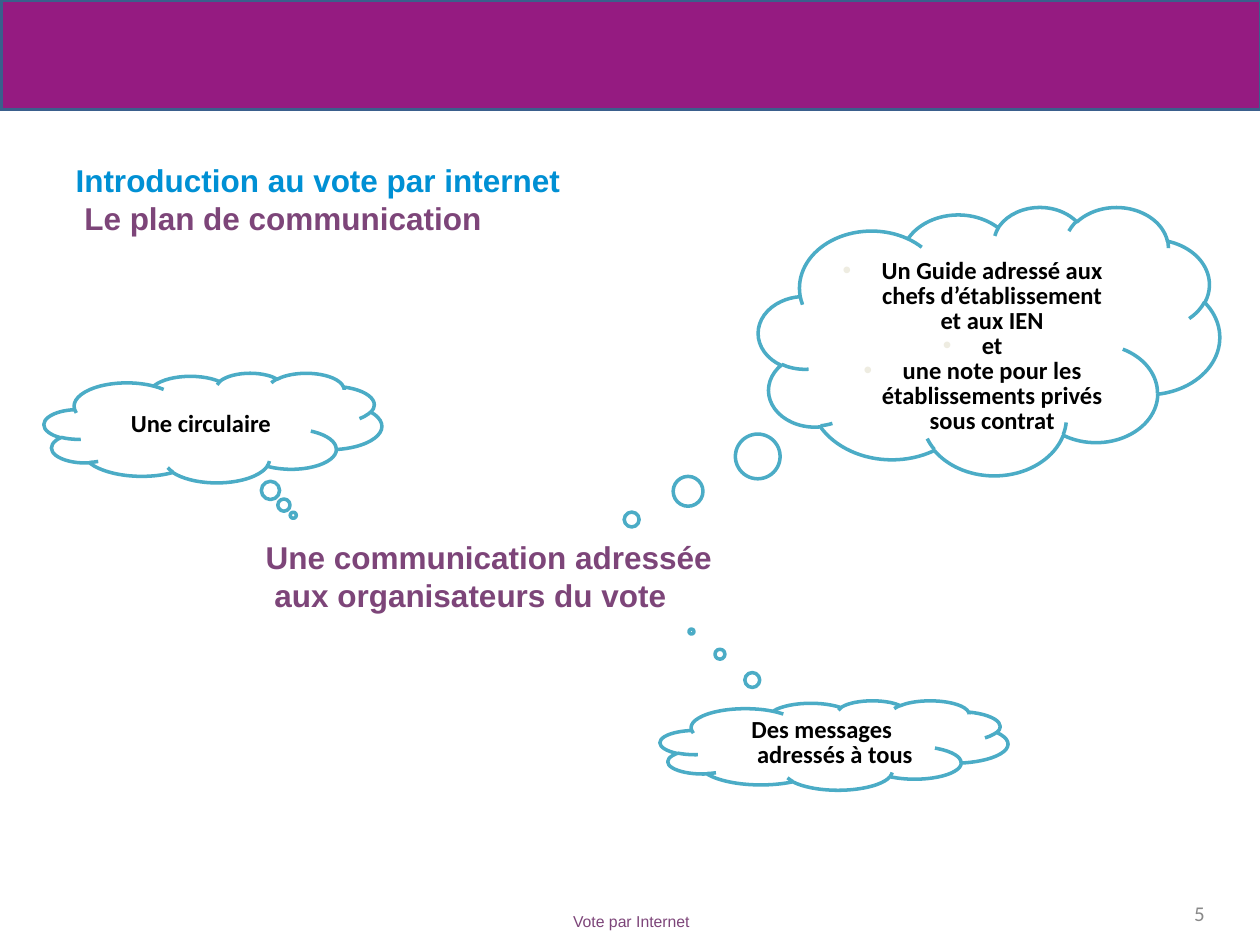
import dataclasses

import pptx
import pptx.dml.color
import pptx.enum.shapes
import pptx.enum.text
import pptx.oxml
import pptx.oxml.ns
import pptx.util

Inches = pptx.util.Inches
Pt = pptx.util.Pt
MSO_SHAPE = pptx.enum.shapes.MSO_SHAPE
PP_ALIGN = pptx.enum.text.PP_ALIGN
MSO_ANCHOR = pptx.enum.text.MSO_ANCHOR
MSO_AUTO_SIZE = pptx.enum.text.MSO_AUTO_SIZE


@dataclasses.dataclass(frozen=True)
class Theme:
    banner: str = "951B81"
    banner_edge: str = "3A5F8C"
    blue: str = "0090D4"
    plum: str = "7D4579"
    grey: str = "898989"
    cloud: str = "FFFFFF"
    cloud_edge: str = "4BACC6"
    ink: str = "000000"
    bullet: str = "EEECE1"
    heading_font: str = "Arial"
    body_font: str = "Calibri"
    heading: int = 18
    body: int = 14
    number: int = 12
    footer: int = 9


theme = Theme()


def add_run(paragraph, text, font, size, color, bold=False):
    run = paragraph.add_run()
    run.text = text
    run.font.name = font
    run.font.size = Pt(size)
    run.font.bold = bold
    run.font.color.rgb = pptx.dml.color.RGBColor.from_string(color)


def paint(shape, fill, edge):
    """Give a shape a flat fill and a 2 pt outline, without shadow."""
    shape.shadow.inherit = False
    shape.fill.solid()
    shape.fill.fore_color.rgb = pptx.dml.color.RGBColor.from_string(fill)
    shape.line.color.rgb = pptx.dml.color.RGBColor.from_string(edge)
    shape.line.width = Pt(2)


presentation = pptx.Presentation()
presentation.slide_width = Inches(10)
presentation.slide_height = Inches(7.5)
slide = presentation.slides.add_slide(presentation.slide_layouts[5])

# Banner, footer and slide number
banner = slide.shapes.add_shape(
    MSO_SHAPE.RECTANGLE, Inches(0.01), Inches(0), Inches(10), Inches(0.87))
paint(banner, theme.banner, theme.banner_edge)

footer = slide.shapes.add_textbox(
    Inches(4.45), Inches(7.19), Inches(1.89), Inches(0.3))
footer.text_frame.word_wrap = True
add_run(footer.text_frame.paragraphs[0], "Vote par Internet",
        theme.heading_font, theme.footer, theme.plum)

slide_number = slide.shapes.add_textbox(
    Inches(8.62), Inches(7.05), Inches(1.04), Inches(0.4))
slide_number.text_frame.word_wrap = True
slide_number.text_frame.vertical_anchor = MSO_ANCHOR.MIDDLE
slide_number.text_frame.paragraphs[0].alignment = PP_ALIGN.RIGHT
add_run(slide_number.text_frame.paragraphs[0], "5",
        theme.body_font, theme.number, theme.grey)

# Title
title = slide.shapes.title
title.left, title.top = Inches(0.5), Inches(1.23)
title.width, title.height = Inches(9), Inches(0.71)
title.text_frame.vertical_anchor = MSO_ANCHOR.TOP
title.text_frame.auto_size = MSO_AUTO_SIZE.NONE
heading = title.text_frame.paragraphs[0]
heading.alignment = PP_ALIGN.LEFT
add_run(heading, "Introduction au vote par internet",
        theme.heading_font, theme.heading, theme.blue, bold=True)
heading.add_line_break()
add_run(heading, " Le plan de communication",
        theme.heading_font, theme.heading, theme.plum, bold=True)

# Central message
message = slide.shapes.add_textbox(
    Inches(2.01), Inches(4.22), Inches(3.78), Inches(0.71))
message.text_frame.word_wrap = False
message.text_frame.auto_size = MSO_AUTO_SIZE.SHAPE_TO_FIT_TEXT
message_lines = ["Une communication adressée", " aux organisateurs du vote"]
for index, line in enumerate(message_lines):
    frame = message.text_frame
    paragraph = frame.add_paragraph() if index else frame.paragraphs[0]
    add_run(paragraph, line, theme.heading_font, theme.heading, theme.plum, bold=True)

# Clouds: left, top, width, height, tail, top margin, hanging indent, bulleted, lines
clouds = [
    (0.35, 2.96, 2.68, 0.87, (0.238, 0.799), 0.05, 0.21, False,
     ["Une circulaire"]),
    (6.02, 1.64, 3.66, 2.13, (-0.775, 0.666), 0.25, 0.31, True,
     ["Un Guide adressé aux chefs d’établissement et aux IEN",
      "et",
      "une note pour les établissements privés sous contrat"]),
    (5.24, 5.56, 2.76, 0.71, (-0.41, -1.272), 0.05, 0.21, False,
     ["Des messages adressés à tous"]),
]
for left, top, width, height, tail, margin, indent, bulleted, lines in clouds:
    cloud = slide.shapes.add_shape(
        MSO_SHAPE.CLOUD_CALLOUT,
        Inches(left), Inches(top), Inches(width), Inches(height))
    cloud.adjustments[0], cloud.adjustments[1] = tail
    paint(cloud, theme.cloud, theme.cloud_edge)
    frame = cloud.text_frame
    frame.word_wrap = True
    frame.vertical_anchor = MSO_ANCHOR.MIDDLE
    frame.margin_top = Inches(margin)
    for index, line in enumerate(lines):
        paragraph = frame.add_paragraph() if index else frame.paragraphs[0]
        properties = paragraph._p.get_or_add_pPr()
        properties.set("marL", str(Inches(indent)))
        properties.set("indent", str(-Inches(indent)))
        if bulleted:
            namespace = pptx.oxml.ns.nsdecls("a")
            for bullet_part in (
                f'<a:buClr {namespace}><a:srgbClr val="{theme.bullet}"/></a:buClr>',
                f'<a:buFont {namespace} typeface="{theme.heading_font}"/>',
                f'<a:buChar {namespace} char="•"/>',
            ):
                properties.append(pptx.oxml.parse_xml(bullet_part))
        paragraph.alignment = PP_ALIGN.CENTER
        paragraph.line_spacing = 0.85
        add_run(paragraph, line, theme.body_font, theme.body, theme.ink, bold=True)

presentation.save("out.pptx")
